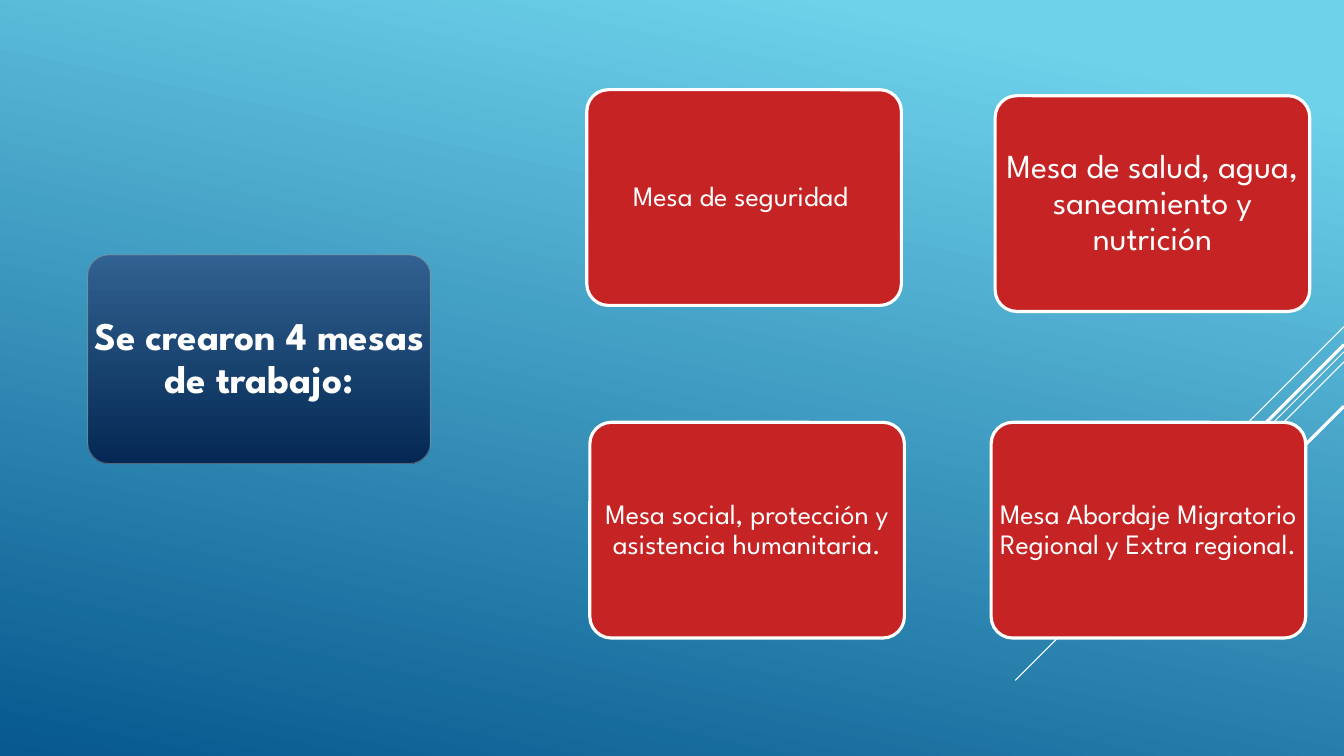
from lxml.etree import SubElement
from pptx import Presentation
from pptx.dml.color import RGBColor
from pptx.enum.shapes import MSO_CONNECTOR, MSO_SHAPE
from pptx.enum.text import MSO_ANCHOR, MSO_AUTO_SIZE, PP_ALIGN
from pptx.oxml.ns import qn
from pptx.util import Inches, Pt

HEADING = "Se crearon 4 mesas de trabajo:"
WORK_TABLES = [  # text, left, top, font size
    ("Mesa de seguridad ", 5.82, 0.89, 20),
    ("Mesa de salud, agua, saneamiento y nutrición", 9.87, 0.95, 24),
    ("Mesa social, protección y asistencia humanitaria.", 5.85, 4.19, 20),
    ("Mesa Abordaje Migratorio Regional y Extra regional.", 9.83, 4.19, 20),
]
RAYS = [  # top at the right edge, run to the lower left, line width
    (3.24, 1.0, 0.75),
    (3.49, 3.26, 0.75),
    (3.59, 2.07, 0.75),
    (3.42, 1.91, 2.25),
    (4.03, 1.39, 2.25),
]
COLORS = {
    "sky": "6ED2EB", "sea": "06588E",
    "panel_top": "316190", "panel_bottom": "042853", "panel_line": "89919C",
    "card": "C62324", "white": "FFFFFF",
}
FONT = "League Spartan"
SLIDE_W, SLIDE_H = 13.33, 7.5
CARD_W, CARD_H = 3.12, 2.14
PANEL_BOX = (0.87, 2.53, 3.4, 2.07)
INSET = 0.01  # the rounded corners already hold the text off the edge


def color(key):
    return RGBColor.from_string(COLORS[key])


def fill_gradient(fill, angle, *stops):
    """Angle runs counter-clockwise; each stop is (position, colour key)."""
    fill.gradient()
    fill.gradient_angle = angle
    for stop, (position, key) in zip(fill.gradient_stops, stops):
        stop.position = position
        stop.color.rgb = color(key)


def write_centred(shape, text, size, bold=False):
    frame = shape.text_frame
    frame.text = text
    frame.word_wrap = True
    frame.auto_size = MSO_AUTO_SIZE.NONE
    frame.vertical_anchor = MSO_ANCHOR.MIDDLE
    frame.margin_left = frame.margin_right = Inches(INSET)
    frame.margin_top = frame.margin_bottom = Inches(INSET)
    paragraph = frame.paragraphs[0]
    paragraph.alignment = PP_ALIGN.CENTER
    paragraph.line_spacing = 0.9
    font = paragraph.runs[0].font
    font.name, font.size, font.bold = FONT, Pt(size), bold
    font.color.rgb = color("white")


def add_rounded(shapes, box, line_key, line_width):
    rounded = shapes.add_shape(MSO_SHAPE.ROUNDED_RECTANGLE, *map(Inches, box))
    rounded.adjustments[0] = 0.1
    rounded.shadow.inherit = False
    rounded.line.color.rgb = color(line_key)
    rounded.line.width = Pt(line_width)
    return rounded


def add_ray(shapes, top, run, width):
    ray = shapes.add_connector(
        MSO_CONNECTOR.STRAIGHT, Inches(SLIDE_W), Inches(top),
        Inches(SLIDE_W - run), Inches(top + run))
    ray.line.color.rgb = color("white")
    ray.line.width = Pt(width)
    SubElement(ray.element.spPr, qn("a:effectLst"))


def add_heading(shapes):
    panel = add_rounded(shapes, PANEL_BOX, "panel_line", 0.75)
    fill_gradient(panel.fill, 270, (0, "panel_top"), (1, "panel_bottom"))
    line_color = panel.element.spPr.find(qn("a:ln")).find(".//" + qn("a:srgbClr"))
    SubElement(line_color, qn("a:alpha")).set("val", "60000")

    title = shapes.title
    title.left, title.top, title.width, title.height = map(Inches, PANEL_BOX)
    write_centred(title, HEADING, 28, bold=True)
    panel.element.addnext(title.element)  # bring the title in front of its panel


def main():
    prs = Presentation()
    prs.slide_width, prs.slide_height = Inches(SLIDE_W), Inches(SLIDE_H)
    slide = prs.slides.add_slide(prs.slide_layouts.get_by_name("Title Only"))
    fill_gradient(slide.background.fill, 258, (0.1, "sky"), (1, "sea"))

    for ray in RAYS:
        add_ray(slide.shapes, *ray)
    add_heading(slide.shapes)
    for text, left, top, size in WORK_TABLES:
        card = add_rounded(slide.shapes, (left, top, CARD_W, CARD_H), "white", 2.25)
        card.fill.solid()
        card.fill.fore_color.rgb = color("card")
        write_centred(card, text, size)
    prs.save("out.pptx")


if __name__ == "__main__":
    main()
